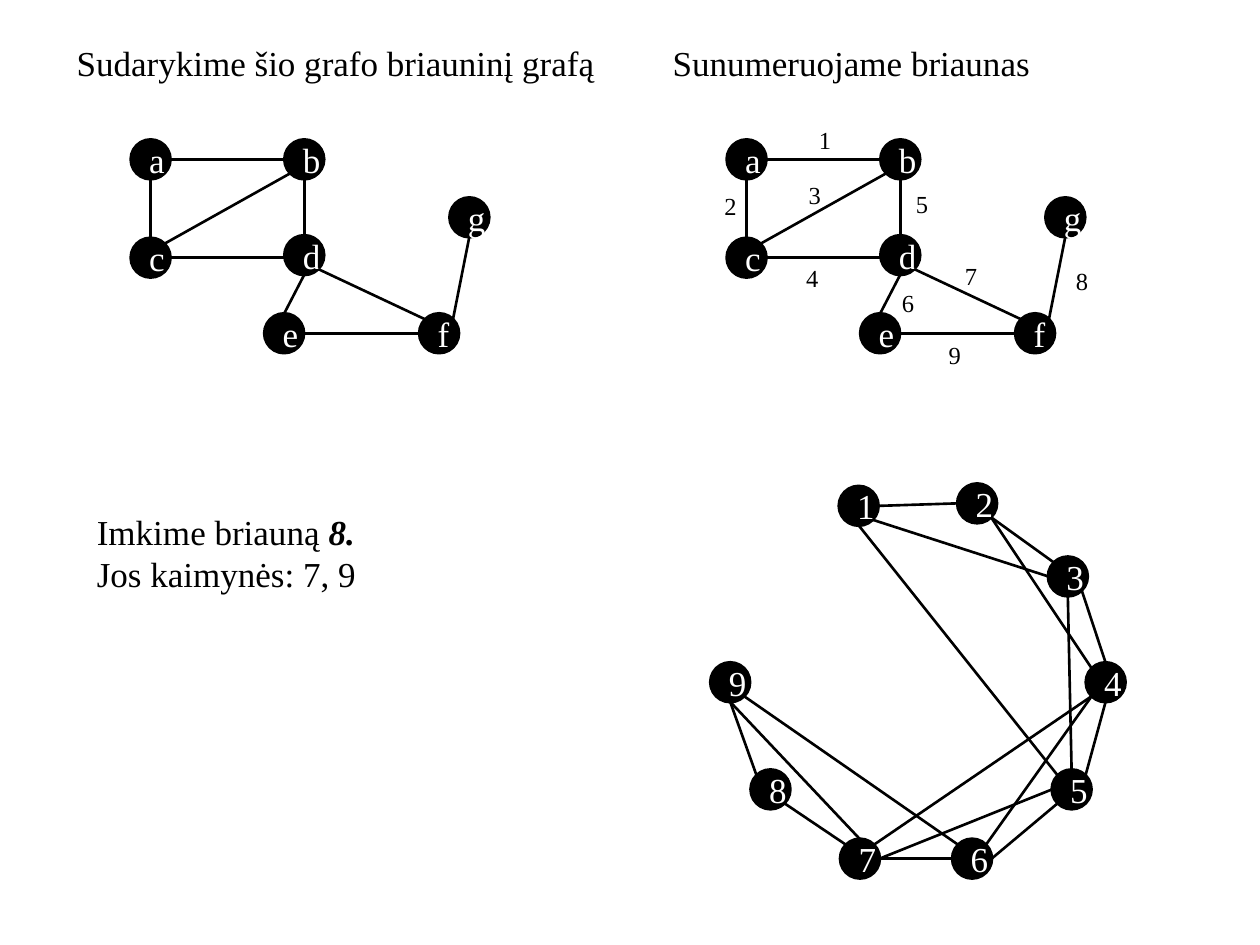
from lxml import etree
from pptx import Presentation
from pptx import util as u
from pptx.dml.color import RGBColor
from pptx.enum import shapes, text
from pptx.oxml.ns import qn

FONT = "Times New Roman"
BLACK, WHITE = "000000", "FFFFFF"
DIAMETER = 0.31
COPY_SHIFT = 4.73  # from the plain graph to the numbered one

# Vertices: name -> left, top
GRAPH = {"a": (1.04, 1.11), "b": (2.26, 1.11), "c": (1.04, 1.89),
         "d": (2.26, 1.87), "e": (2.10, 2.49), "f": (3.33, 2.49),
         "g": (3.57, 1.57)}
LINE_GRAPH = {"3": (8.32, 4.42), "1": (6.66, 3.86), "2": (7.60, 3.84),
              "9": (5.64, 5.26), "8": (5.96, 6.11), "4": (8.62, 5.26),
              "5": (8.35, 6.11), "6": (7.56, 6.66), "7": (6.67, 6.66)}

# Edges: vertex and compass side at each end
GRAPH_EDGES = ["a e b w", "c n a s", "d n b s", "c e d w", "e e f w",
               "e n d s", "d se f nw", "f ne g s", "c ne b sw"]
LINE_GRAPH_EDGES = ["1 e 2 w", "1 se 3 w", "1 s 5 nw", "2 se 3 nw",
                    "4 nw 2 se", "3 se 4 n", "3 s 5 n", "4 s 5 ne",
                    "6 ne 4 sw", "7 ne 4 sw", "5 sw 6 e", "5 w 7 e",
                    "6 w 7 e", "6 nw 9 se", "7 nw 8 se", "7 n 9 s",
                    "8 nw 9 s"]
LEVEL_EDGES = ["c e d w"]  # drawn flat although the vertices differ slightly

EDGE_NUMBERS = {"1": (6.40, 0.94), "2": (5.65, 1.47), "3": (6.32, 1.38),
                "5": (7.17, 1.45), "4": (6.30, 2.04), "7": (7.56, 2.02),
                "8": (8.44, 2.06), "9": (7.43, 2.65), "6": (7.06, 2.24)}

# Text blocks: left, top, width, height, lines of (text, emphasised)
TEXTS = [
    (0.51, 0.28, 4.33, 0.44, [[("Sudarykime šio grafo briauninį grafą", False)]]),
    (5.24, 0.28, 4.33, 0.44, [[("Sunumeruojame briaunas", False)]]),
    (0.67, 4.00, 3.86, 0.77, [[("Imkime briauną ", False), ("8.", True)],
                              [("Jos kaimynės: 7, 9", False)]]),
]


def color(value):
    return RGBColor.from_string(value)


def add_span(para, words, size, ink, emphasised=False):
    span = para.add_run()
    span.text = words
    span.font.name = FONT
    span.font.size = u.Pt(size)
    span.font.bold = span.font.italic = emphasised
    span.font.color.rgb = color(ink)


def add_text(parent, left, top, width, height, lines, size):
    box = parent.add_textbox(*map(u.Inches, (left, top, width, height)))
    frame = box.text_frame
    frame.word_wrap = True
    frame.auto_size = text.MSO_AUTO_SIZE.SHAPE_TO_FIT_TEXT
    para = frame.paragraphs[0]
    for index, line in enumerate(lines):
        if index:
            para.add_line_break()
        for words, emphasised in line:
            add_span(para, words, size, BLACK, emphasised)


def add_vertex(parent, name, left, top):
    circle = parent.add_shape(shapes.MSO_SHAPE.OVAL, u.Inches(left), u.Inches(top),
                              u.Inches(DIAMETER), u.Inches(DIAMETER))
    circle.shadow.inherit = False
    circle.fill.solid()
    circle.fill.fore_color.rgb = color(BLACK)
    circle.line.color.rgb = color(BLACK)
    circle.line.width = u.Pt(2)
    frame = circle.text_frame
    frame.word_wrap = True
    frame.vertical_anchor = text.MSO_ANCHOR.MIDDLE
    para = frame.paragraphs[0]
    para.alignment = text.PP_ALIGN.CENTER
    add_span(para, name, 20, WHITE)


def rim_point(corner, side):
    """Point on a vertex's rim in a compass direction."""
    radius = DIAMETER / 2
    reach = radius * (0.71 if len(side) == 2 else 1)
    across = ("e" in side) - ("w" in side)
    down = ("s" in side) - ("n" in side)
    return corner[0] + radius + reach * across, corner[1] + radius + reach * down


def add_edge(parent, vertices, edge):
    start, start_side, end, end_side = edge.split()
    x1, y1 = rim_point(vertices[start], start_side)
    x2, y2 = rim_point(vertices[end], end_side)
    if edge in LEVEL_EDGES:
        y2 = y1
    line = parent.add_connector(shapes.MSO_CONNECTOR.STRAIGHT,
                                *map(u.Inches, (x1, y1, x2, y2)))
    line.line.color.rgb = color(BLACK)
    line.line.width = u.Pt(1.5)
    etree.SubElement(line._element.spPr, qn("a:effectLst"))


def add_graph(page, vertices, edges, numbers=None):
    parent = page.shapes.add_group_shape().shapes
    for name, corner in vertices.items():
        add_vertex(parent, name, *corner)
    for edge in edges:
        add_edge(parent, vertices, edge)
    for number, (left, top) in (numbers or {}).items():
        add_text(parent, left, top, 0.24, 0.34, [[(number, False)]], 14)


def main():
    deck = Presentation()
    deck.slide_width, deck.slide_height = u.Inches(10), u.Inches(7.5)
    page = deck.slides.add_slide(deck.slide_layouts[6])

    # Graph, its copy with numbered edges, and the line graph
    numbered = {name: (left + COPY_SHIFT, top) for name, (left, top) in GRAPH.items()}
    add_graph(page, GRAPH, GRAPH_EDGES)
    add_graph(page, numbered, GRAPH_EDGES, EDGE_NUMBERS)
    add_graph(page, LINE_GRAPH, LINE_GRAPH_EDGES)

    # Headings and remark
    for left, top, width, height, lines in TEXTS:
        add_text(page.shapes, left, top, width, height, lines, 20)

    deck.save("out.pptx")


if __name__ == "__main__":
    main()
